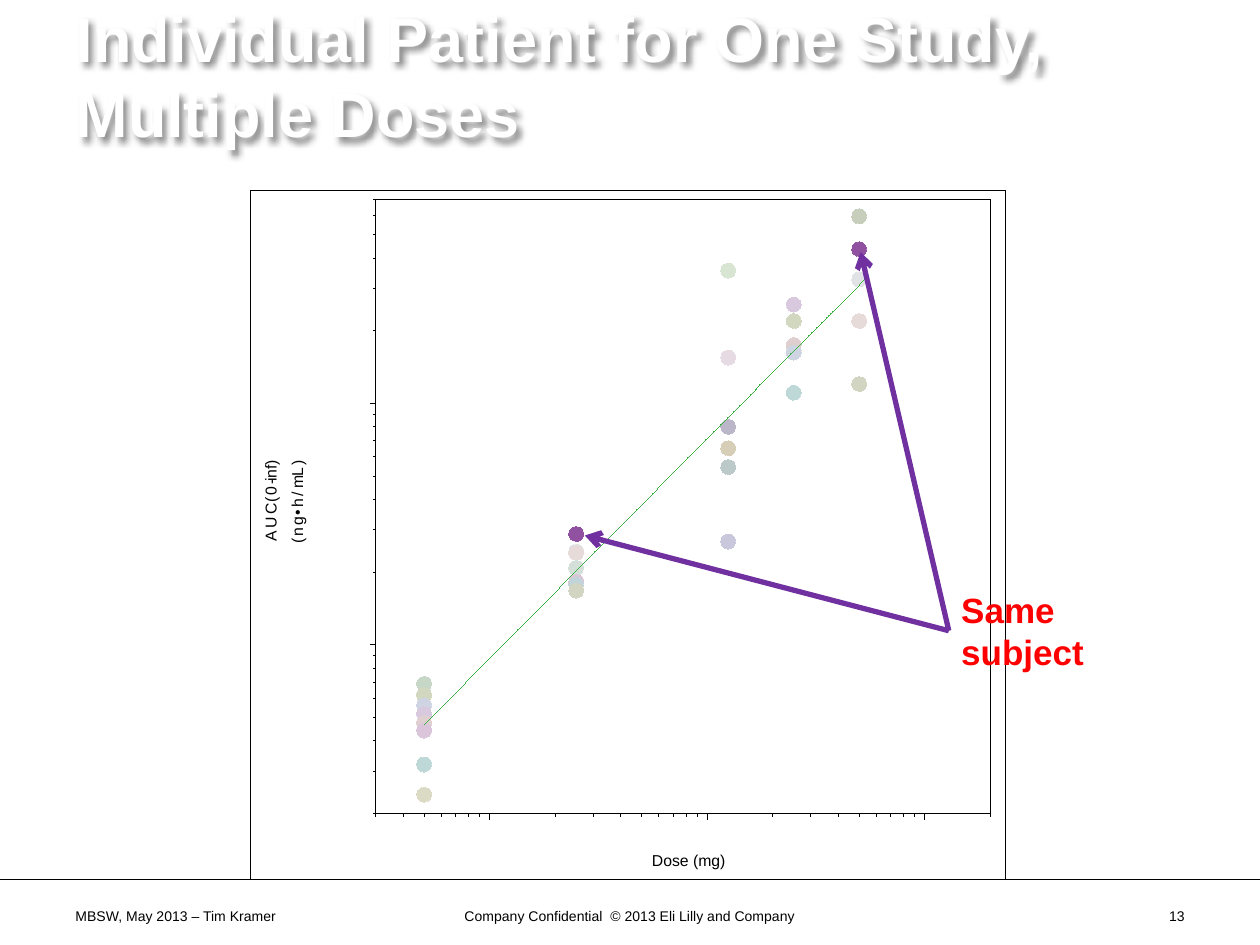
import math

import pptx
import pptx.dml.color
import pptx.enum.dml
import pptx.enum.shapes
import pptx.enum.text
import pptx.oxml
import pptx.util
from lxml import etree

Pt = pptx.util.Pt
RGB = pptx.dml.color.RGBColor
Align = pptx.enum.text.PP_ALIGN
Shape = pptx.enum.shapes.MSO_SHAPE
NS = "http://schemas.openxmlformats.org/drawingml/2006/main"

BLACK = RGB(0, 0, 0)
WHITE = RGB(255, 255, 255)
RED = RGB(255, 0, 0)
GREEN = RGB(0x39, 0xB1, 0x43)
PURPLE = RGB(0x70, 0x30, 0xA0)

# One colour for each subject
HUES = dict(zip("abcdefghijklmnopqrstuvw", map(RGB.from_string, (
    "C7CFBC E1E2E6 E6DBD8 D1D5C1 D8C9DF D2D8BF E0CFD1 DCD0C5 "
    "CED4E2 BED8D8 D8E5D2 E6DBE3 BCB6C9 D7CEB8 BBCAC8 C9C7DC "
    "D5DFD9 DCC6D6 C2D4DA C6D7C7 DBC5DB DBDAC4 9051A0").split())))

# Dose: subjects, and points down from the top of the field
DOTS = {
    50: ("abcdw", (9.8, 45.8, 69.6, 105.6, 28.6)),
    25: ("efghij", (60.2, 69.6, 83.3, 86.9, 87.6, 110.6)),
    12.5: ("klmnop", (40.8, 90.5, 130.1, 142.3, 153.1, 195.6)),
    2.5: ("bcqrsdw", (201.4, 202.1, 210.7, 218.6, 220.1, 223.7, 191.3)),
    0.5: ("tfiegujv", (277, 283.4, 289.2, 294.2, 299.3, 303.6, 323, 340.3)),
}
DOSES = (0.3, 200)
LEVELS = (0.2, 70)
TREND = (0.5, 300), (55, 43.7)

# Column of the upright axis name: its parts, and their middles
NAMES = {
    11.2: ("A U C ( 0 - inf )",
           (198.4, 190.5, 182.5, 176.8, 171.7, 166.7, 161.7, 155.9)),
    26.3: ("( n g • h / m L )",
           (200.5, 195.5, 189, 184, 178.9, 173.9, 168.1, 160.9, 155.9)),
}


def font(para, size, color=BLACK, bold=False):
    para.font.name = "Arial"
    para.font.size = Pt(size)
    para.font.color.rgb = color
    para.font.bold = bold


def stroke(item, color, width=0):
    """Colour a line; a width of 0 must be written out as a hairline."""
    item.line.color.rgb = color
    item.line._get_or_add_ln().set("w", str(Pt(width)))


def label(shapes, text, box, size, color=BLACK, bold=False,
          align=Align.LEFT, tight=False):
    """Add a text box; a tight one has no insets and does not wrap."""
    item = shapes.add_textbox(*map(Pt, box))
    frame = item.text_frame
    frame.word_wrap = not tight
    if tight:
        frame.margin_left = frame.margin_right = 0
        frame.margin_top = frame.margin_bottom = 0
    para = frame.paragraphs[0]
    para.text = text
    para.alignment = align
    font(para, size, color, bold)
    return item


def line(shapes, start, end, color=BLACK, width=0, arrow=False):
    item = shapes.add_connector(
        pptx.enum.shapes.MSO_CONNECTOR.STRAIGHT, *map(Pt, start + end))
    stroke(item, color, width)
    if arrow:
        tail = etree.SubElement(item.line._get_or_add_ln(), f"{{{NS}}}tailEnd")
        tail.set("type", "arrow")
    etree.SubElement(item._element.spPr, f"{{{NS}}}effectLst")


def shape(shapes, kind, box, edge, fill=None):
    item = shapes.add_shape(kind, *map(Pt, box))
    item.shadow.inherit = False
    if fill is None:
        item.fill.background()
    else:
        item.fill.solid()
        item.fill.fore_color.rgb = fill
    stroke(item, edge)
    return item


def heading(slide, left, top, width, height):
    item = slide.shapes.title
    item.left, item.top, item.width, item.height = map(
        Pt, (left, top, width, height))
    item.fill.background()
    item._element.spPr.append(pptx.oxml.parse_xml(
        f'<a:effectLst xmlns:a="{NS}"><a:outerShdw blurRad="38100" '
        'dist="38100" dir="2700000" algn="tl"><a:srgbClr val="000000">'
        '<a:alpha val="43000"/></a:srgbClr></a:outerShdw></a:effectLst>'))
    frame = item.text_frame
    frame.auto_size = pptx.enum.text.MSO_AUTO_SIZE.NONE
    frame.vertical_anchor = pptx.enum.text.MSO_ANCHOR.MIDDLE
    para = frame.paragraphs[0]
    para.text = "Individual Patient for One Study, Multiple Doses"
    para.alignment = Align.LEFT
    font(para, 36, WHITE, True)


def footer(shapes, left, top, width, height):
    line(shapes, (left, top), (left + width, top), width=0.5)
    row = top + 12.2
    label(shapes, "MBSW, May 2013 – Tim Kramer",
          (left + 36, row, 168, height), 8)
    label(shapes, "Company Confidential  © 2013 Eli Lilly and Company",
          (left + 246, row, 228, height), 8, align=Align.CENTER)
    label(shapes, "13", (left + width - 204, row, 168, height), 8,
          align=Align.RIGHT)


def ticks(low, high):
    """Yield the value and length of each mark on a log axis."""
    for power in range(-1, 3):
        for digit in range(1, 10):
            value = digit * 10 ** power
            if low * 0.999 <= value <= high * 1.001:
                major = digit == 1 and power >= 0
                yield value, 3.2 if major else 1.6


def share(value, low, high):
    """Tell how far along a log axis a value lies, from 0 to 1."""
    return math.log(value / low) / math.log(high / low)


def plot(shapes, left, top, width, height):
    shape(shapes, Shape.RECTANGLE, (left, top, width, height), BLACK)
    side, west, north = 351, left + 71.5, top + 5.2
    south = north + side
    shape(shapes, Shape.RECTANGLE, (west, north, side, side), BLACK, WHITE)

    def across(dose):
        return west + side * share(dose, *DOSES)

    for value, size in ticks(*LEVELS):
        y = south - side * share(value, *LEVELS)
        line(shapes, (west, y), (west - size, y))
    for value, size in ticks(*DOSES):
        x = across(value)
        line(shapes, (x, south), (x, south + size))

    span = 8.6
    for dose, (names, drops) in DOTS.items():
        for name, drop in zip(names, drops):
            hue = HUES[name]
            box = (across(dose) - span / 2, north + drop - span / 2, span, span)
            dot = shape(shapes, Shape.OVAL, box, hue, hue)
            dot.line.dash_style = pptx.enum.dml.MSO_LINE.ROUND_DOT

    (first, low), (last, high) = TREND
    doses = [first + 0.85 * step for step in range(49)] + [last]
    path = [(Pt(across(dose)),
             Pt(north + low + (high - low) * share(dose, first, last)))
            for dose in doses]
    pen = shapes.build_freeform(*path[0])
    pen.add_line_segments(path[1:], close=False)
    trend = pen.convert_to_shape()
    trend.shadow.inherit = False
    trend.fill.background()
    stroke(trend, GREEN)

    for column, (parts, middles) in NAMES.items():
        for part, middle in zip(parts.split(), middles):
            wide = 3 + 2.2 * len(part)
            box = (left + column - wide / 2, top + middle - 5.4, wide, 10.8)
            label(shapes, part, box, 9, align=Align.CENTER,
                  tight=True).rotation = 270
    label(shapes, "Dose (mg)", (left + 229, top + 377.3, 42.5, 10.8),
          9, align=Align.CENTER, tight=True)


def callout(shapes, left, top, width, height):
    label(shapes, "Same subject", (left, top, width, height), 20, RED, True)
    start = (left, top + height / 2)
    for end in (left - 50.4, top - 188.6), (left - 208, top - 26.6):
        line(shapes, start, end, PURPLE, 3, arrow=True)


def main():
    deck = pptx.Presentation()
    deck.slide_width, deck.slide_height = Pt(720), Pt(540)
    slide = deck.slides.add_slide(deck.slide_layouts[5])
    heading(slide, 36, -2.2, 648, 90)
    footer(slide.shapes, 0, 502.6, 720, 18)
    plot(slide.shapes.add_group_shape().shapes, 143.3, 108.7, 431.3, 393.8)
    callout(slide.shapes.add_group_shape().shapes, 542.2, 332.6, 108, 55.7)
    deck.save("out.pptx")


if __name__ == "__main__":
    main()
